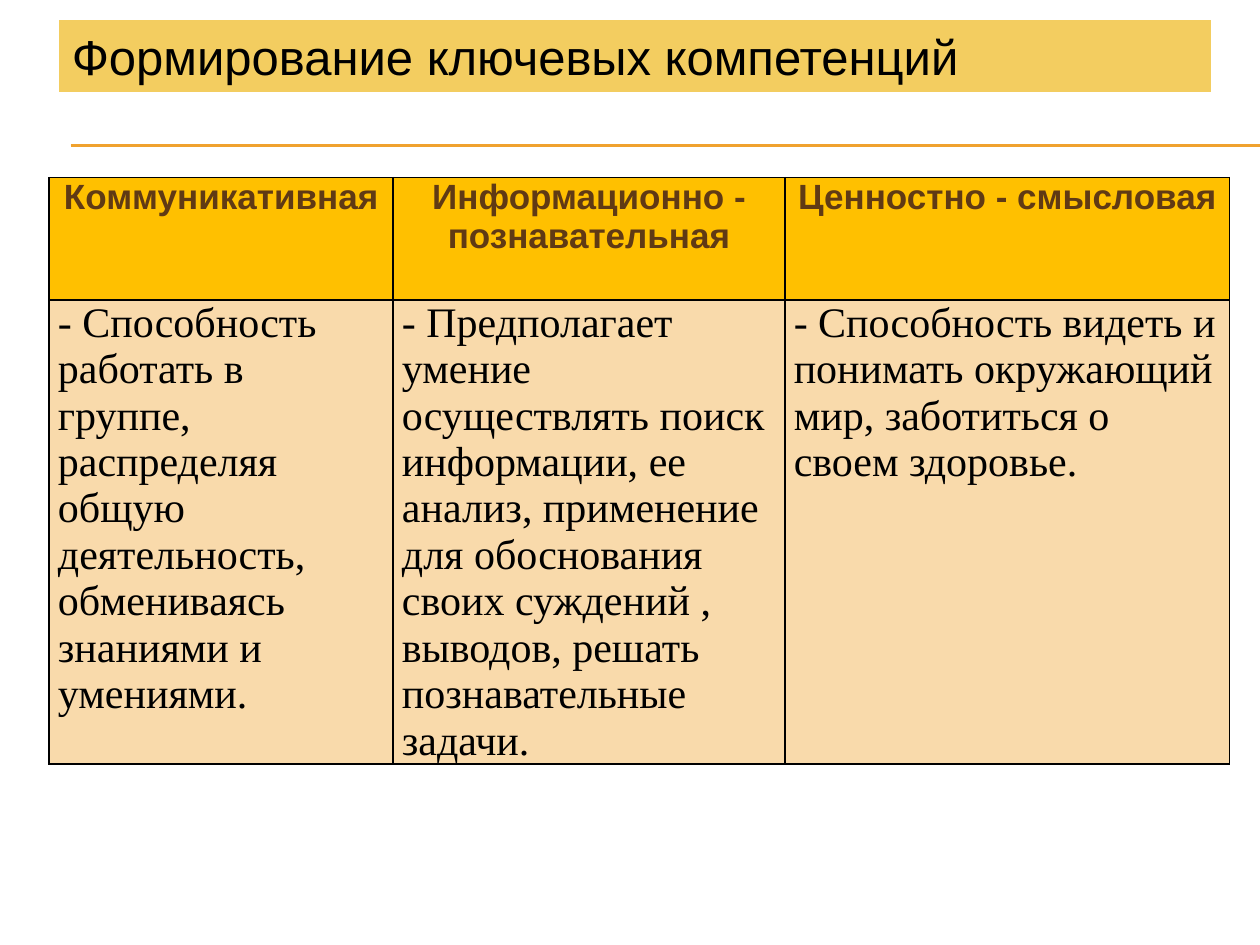
from lxml import etree
from pptx import Presentation
from pptx.dml.color import RGBColor
from pptx.enum.text import MSO_ANCHOR, PP_ALIGN
from pptx.oxml import parse_xml
from pptx.oxml.ns import qn
from pptx.util import Inches, Pt

LEFT, CENTER = PP_ALIGN.LEFT, PP_ALIGN.CENTER
MIDDLE = MSO_ANCHOR.MIDDLE
NS = "http://schemas.openxmlformats.org/drawingml/2006/main"

TITLE = "Формирование ключевых компетенций"
COMPETENCES = [
    ("Коммуникативная",
     "- Способность работать в группе, распределяя общую деятельность, "
     "обмениваясь знаниями и умениями."),
    ("Информационно - познавательная",
     "- Предполагает умение осуществлять поиск информации, ее анализ, "
     "применение для обоснования своих суждений , выводов, решать "
     "познавательные задачи."),
    ("Ценностно - смысловая",
     "- Способность видеть и понимать окружающий мир, заботиться о своем здоровье."),
]
COL_WIDTHS = [2.73, 3.11, 3.53]
ROW_HEIGHTS = [0.97, 3.02]
ROW_STYLES = [
    dict(fill="FFC000", font="Arial", size=20, color="603A14", bold=True, align=CENTER),
    dict(fill="F9DAAB", font="Times New Roman", size=24, color="000000", bold=False, align=LEFT),
]
RULE_YS = [1.15, 1.16]


def rgb(value):
    return RGBColor.from_string(value)


def set_text(tf, text, font, size, color, bold, align):
    tf.text = text
    p = tf.paragraphs[0]
    p.alignment = align
    p.font.name = font
    p.font.size = Pt(size)
    p.font.bold = bold
    p.font.color.rgb = rgb(color)


def add_rule(s, y):
    line = s.shapes.add_connector(1, Inches(0.56), Inches(y), Inches(10), Inches(y))
    line.line.color.rgb = rgb("F0A22E")
    line.line.width = Pt(0.75)
    etree.SubElement(line._element.spPr, qn("a:effectLst"))


def set_borders(cell):
    tc_pr = cell._tc.get_or_add_tcPr()
    for side in "LRTB":
        tc_pr.append(parse_xml(
            f'<a:ln{side} xmlns:a="{NS}" w="12700"><a:solidFill>'
            f'<a:srgbClr val="000000"/></a:solidFill></a:ln{side}>'))


def fill_cell(cell, text, fill, **style):
    cell.margin_left = cell.margin_right = Inches(0.07)
    cell.margin_top = cell.margin_bottom = 0
    set_borders(cell)
    cell.fill.solid()
    cell.fill.fore_color.rgb = rgb(fill)
    set_text(cell.text_frame, text, **style)


def add_competence_table(s):
    table = s.shapes.add_table(
        len(ROW_HEIGHTS), len(COL_WIDTHS), Inches(0.39), Inches(1.41),
        Inches(sum(COL_WIDTHS)), Inches(sum(ROW_HEIGHTS))).table
    for col, width in zip(table.columns, COL_WIDTHS):
        col.width = Inches(width)
    for row, height in zip(table.rows, ROW_HEIGHTS):
        row.height = Inches(height)
    for c, texts in enumerate(COMPETENCES):
        for r, (text, style) in enumerate(zip(texts, ROW_STYLES)):
            fill_cell(table.cell(r, c), text, **style)


def add_title(s):
    title = s.shapes.title
    title.left, title.top = Inches(0.47), Inches(0.16)
    title.width, title.height = Inches(9.14), Inches(0.57)
    title.fill.solid()
    title.fill.fore_color.rgb = rgb("F3CD60")
    title.text_frame.vertical_anchor = MIDDLE
    set_text(title.text_frame, TITLE, "Arial", 28, "000000", False, LEFT)


def main():
    prs = Presentation()
    prs.slide_width, prs.slide_height = Inches(10), Inches(7.5)
    s = prs.slides.add_slide(prs.slide_layouts[5])
    for y in RULE_YS:
        add_rule(s, y)
    add_competence_table(s)
    add_title(s)
    prs.save("out.pptx")


if __name__ == "__main__":
    main()
